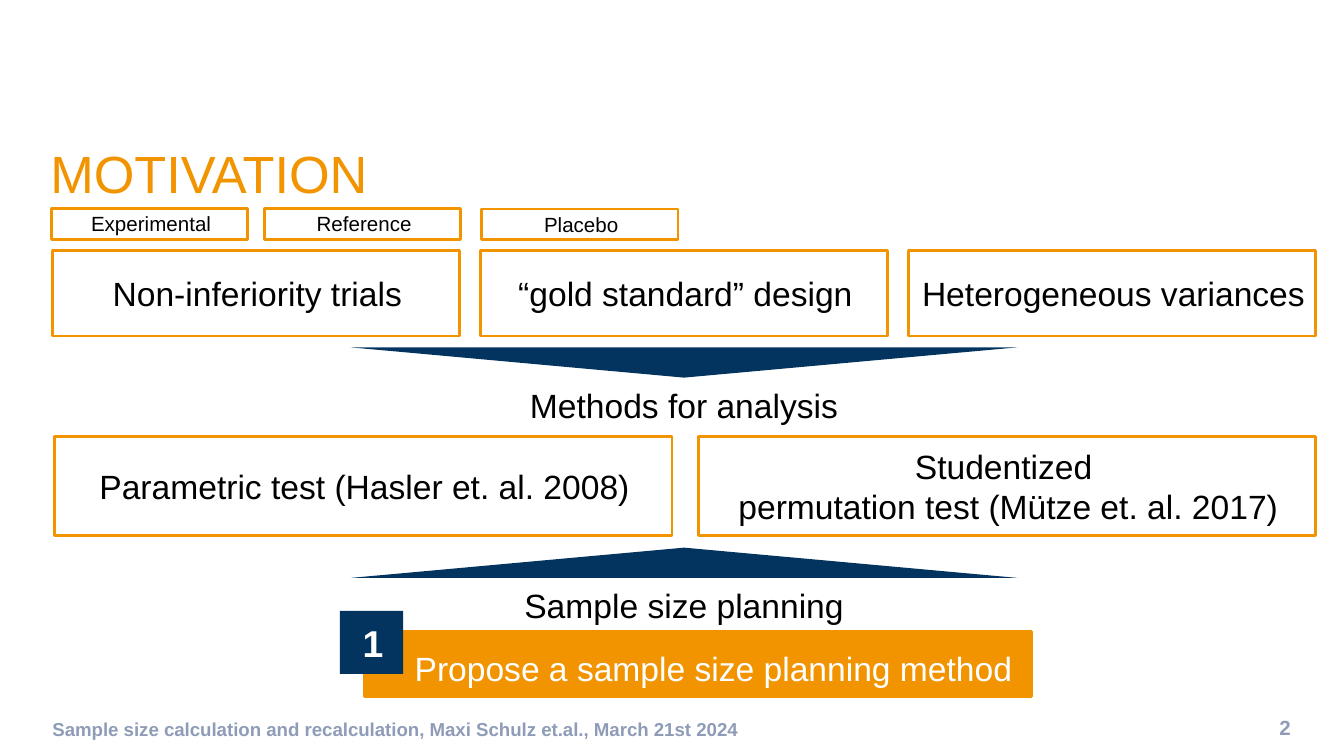
"""Build the motivation slide of a talk on sample size planning."""
from pptx import Presentation
from pptx.dml.color import RGBColor
from pptx.enum.shapes import MSO_SHAPE as Shape
from pptx.enum.text import MSO_ANCHOR as Anchor, MSO_AUTO_SIZE as AutoSize, PP_ALIGN as Align
from pptx.util import Pt

PX = 4572
COLORS = {"orange": "F29400", "navy": "033460", "white": "FFFFFF", "black": "000000", "footer": "8F9CB8"}


def write(shape, text, size, color="black", align=Align.CENTER, anchor=Anchor.MIDDLE, bold=False, insets=(4, 0, 0, 0)):
    frame = shape.text_frame
    frame.word_wrap = True
    frame.auto_size = AutoSize.NONE
    frame.vertical_anchor = anchor
    frame.margin_left, frame.margin_top, frame.margin_right, frame.margin_bottom = [inset * PX for inset in insets]
    paragraph = frame.paragraphs[0]
    paragraph.text = text
    paragraph.alignment = align
    for run in paragraph.runs:
        run.font.name = "Arial"
        run.font.size = Pt(size)
        run.font.bold = bold
        run.font.color.rgb = RGBColor.from_string(COLORS[color])
    return paragraph


def add_block(kind, left, top, width, height, fill="white", line="orange"):
    shape = slide.shapes.add_shape(kind, left * PX, top * PX, width * PX, height * PX)
    shape.shadow.inherit = False
    shape.fill.solid()
    shape.fill.fore_color.rgb = RGBColor.from_string(COLORS[fill])
    if line:
        shape.line.color.rgb = RGBColor.from_string(COLORS[line])
        shape.line.width = Pt(1.5)
    else:
        shape.line.fill.background()
    return shape


presentation = Presentation()
presentation.slide_width, presentation.slide_height = 2000 * PX, 1125 * PX
slide = presentation.slides.add_slide(presentation.slide_layouts[5])

title = slide.shapes.title
title.left, title.top, title.width, title.height = 71 * PX, 212 * PX, 1842 * PX, 70 * PX
write(title, "MOTIVATION", 28, "orange", Align.LEFT, Anchor.TOP).line_spacing = Pt(33)

topics = ["Non-inferiority trials", "“gold standard” design", "Heterogeneous variances"]
for column, topic in enumerate(topics):
    write(add_block(Shape.RECTANGLE, 78 + 637 * column, 373, 606, 127), topic, 18)

for left, top, arm in [(77, 310, "Experimental"), (394, 310, "Reference"), (717, 311, "Placebo")]:
    write(add_block(Shape.RECTANGLE, left, top, 292, 46), arm, 11)

tests = ["Parametric test (Hasler et. al. 2008)", "Studentized \vpermutation test (Mütze et. al. 2017)"]
for column, test in enumerate(tests):
    write(add_block(Shape.RECTANGLE, 81 + 958 * column, 650, 919, 147), test, 18)

for arrow_top, rotation, heading_top, heading in [
    (517, 0, 563, "Methods for analysis"),
    (815, 180, 860, "Sample size planning"),
]:
    arrow = add_block(Shape.DOWN_ARROW, 522, arrow_top, 992, 45, "navy", None)
    arrow.adjustments[0], arrow.adjustments[1] = 0.12, 1
    arrow.rotation = rotation
    heading_box = slide.shapes.add_textbox(518 * PX, heading_top * PX, 1000 * PX, 80 * PX)
    write(heading_box, heading, 18, anchor=Anchor.TOP, insets=(20, 10, 20, 10))

proposal = add_block(Shape.RECTANGLE, 542, 940, 993, 96, "orange")
proposal_text = write(
    proposal, "Propose a sample size planning method", 18, "white", Align.LEFT, insets=(75, 0, 0, 0)
)
proposal_text.line_spacing = Pt(26)
proposal_text.space_after = Pt(14)
write(add_block(Shape.RECTANGLE, 506, 909, 94, 94, "navy", None), "1", 20, "white", bold=True)

footer_text = "Sample size calculation and recalculation, Maxi Schulz et.al., March 21st 2024"
for left, top, width, text, size, align in [
    (78, 1066, 1654, footer_text, 10, Align.LEFT),
    (1763, 1065, 158, "2", 11, Align.RIGHT),
]:
    footer = slide.shapes.add_textbox(left * PX, top * PX, width * PX, 30 * PX)
    write(footer, text, size, "footer", align, Anchor.TOP, True, (0, 5, 0, 0)).line_spacing = Pt(11)

presentation.save("out.pptx")
